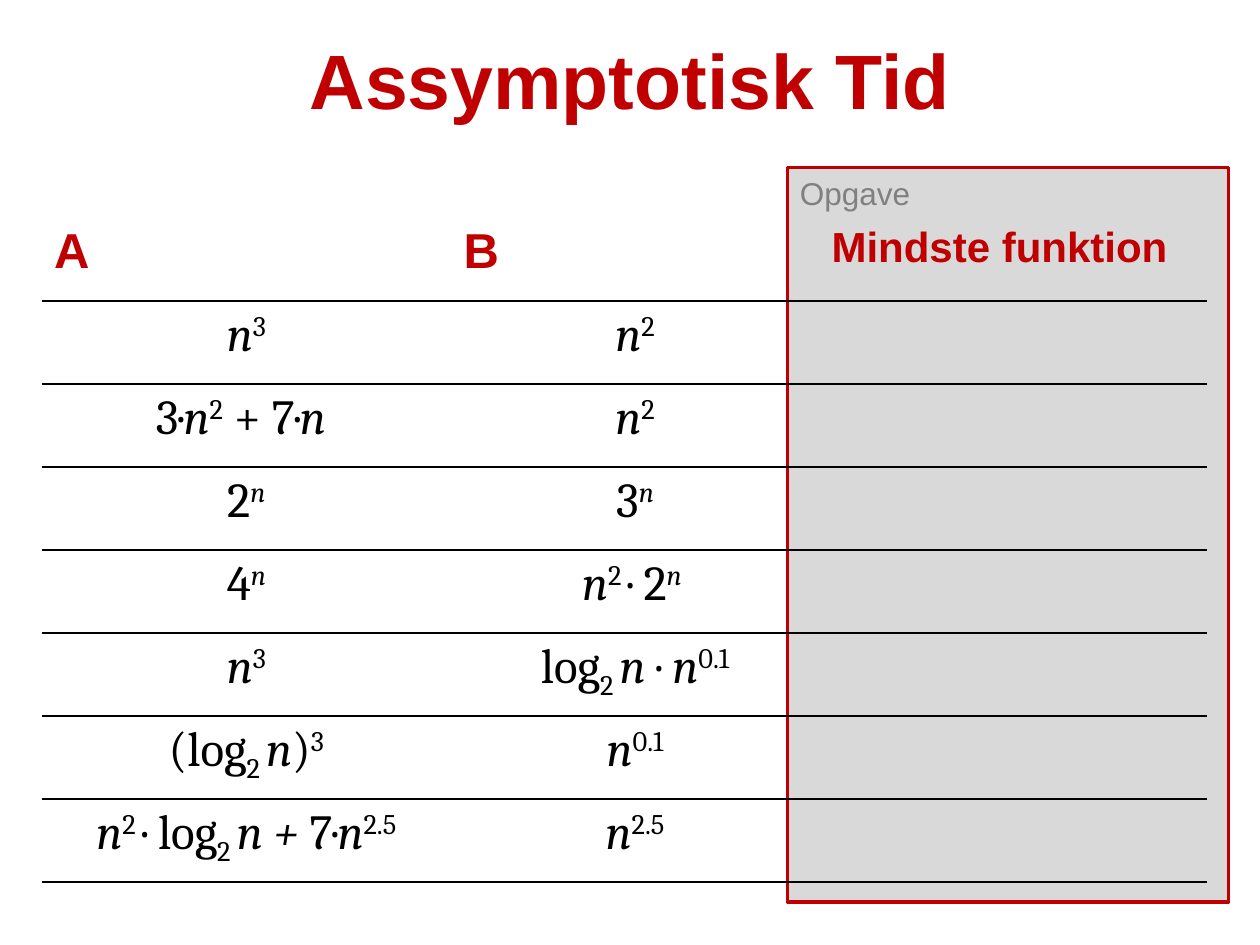
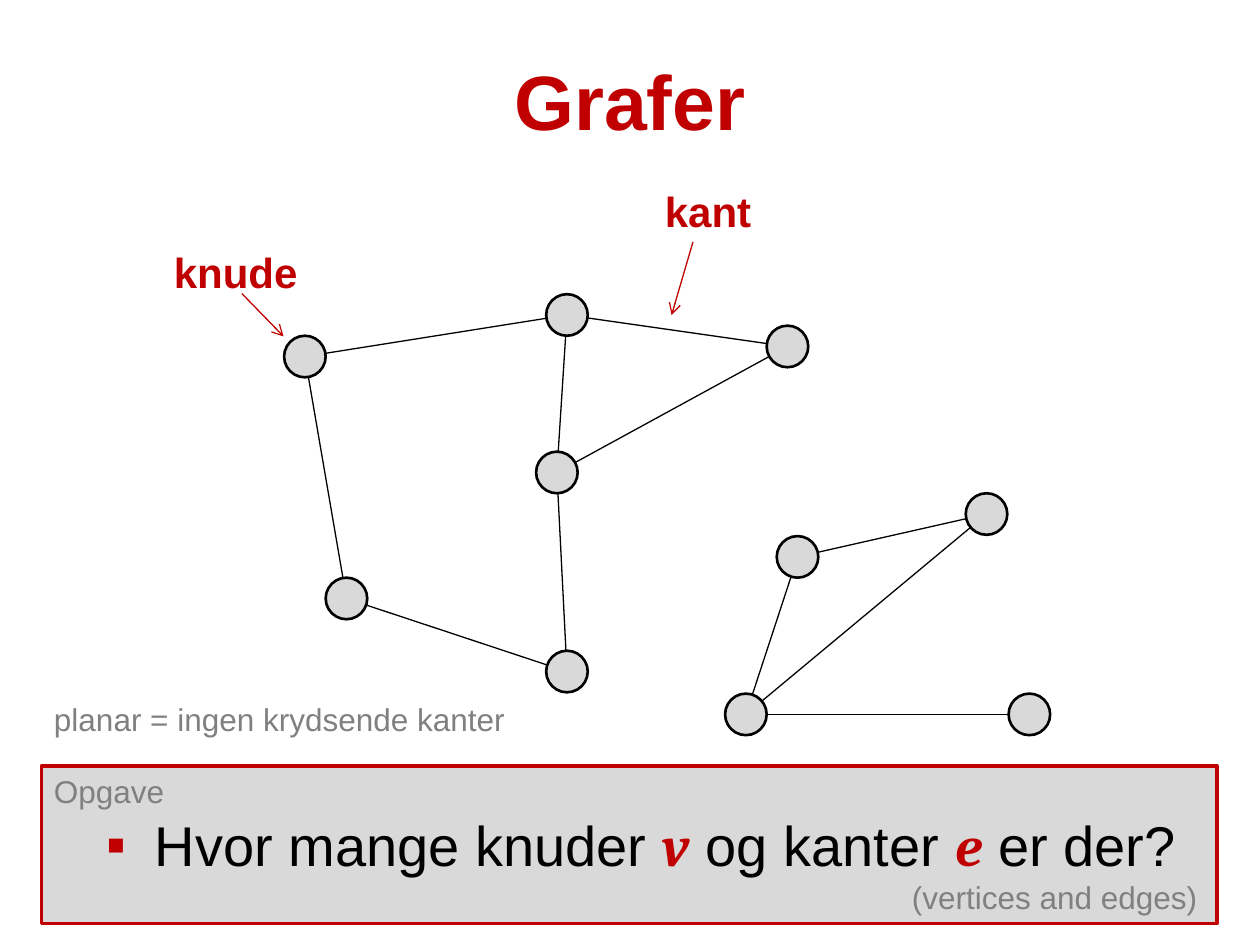
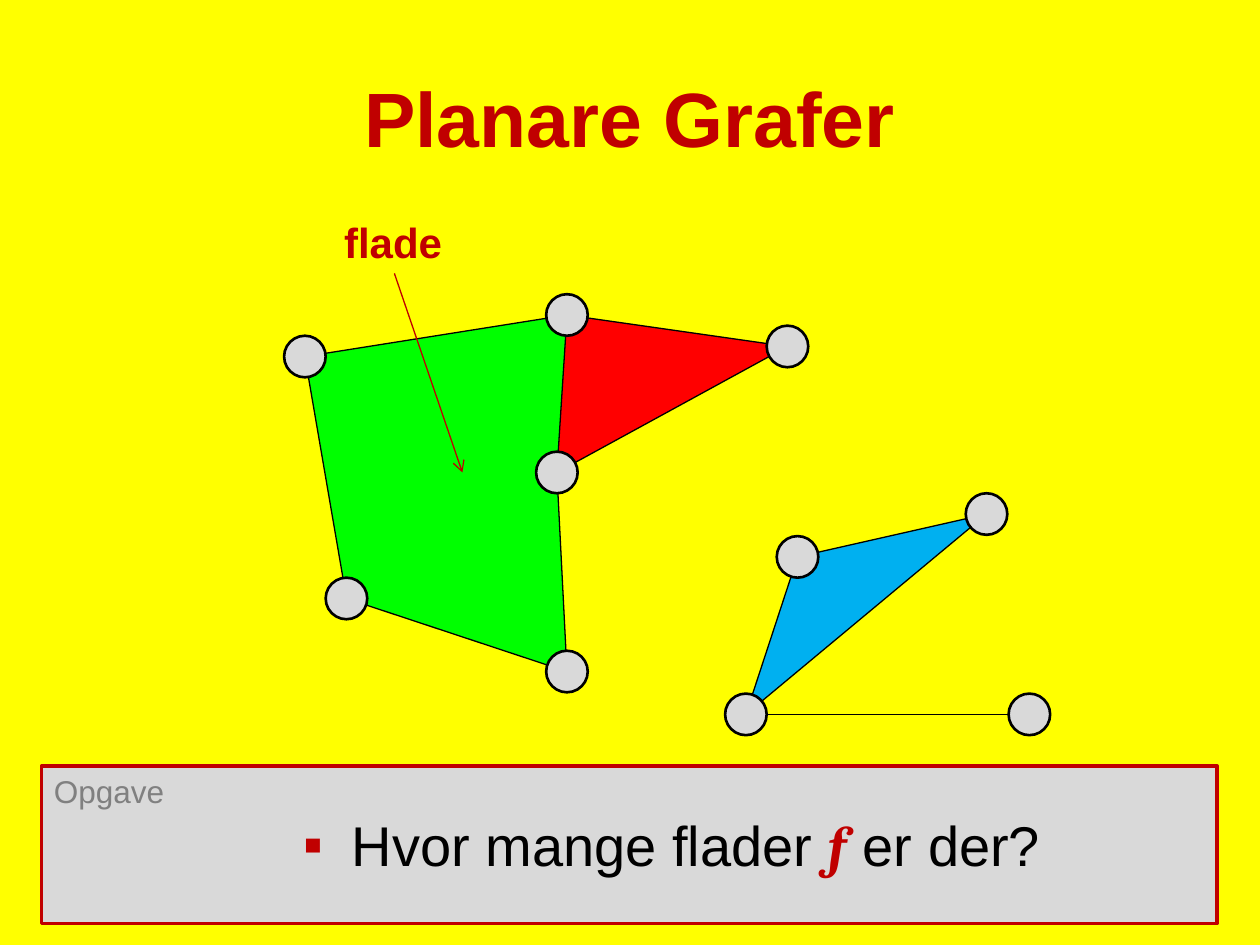
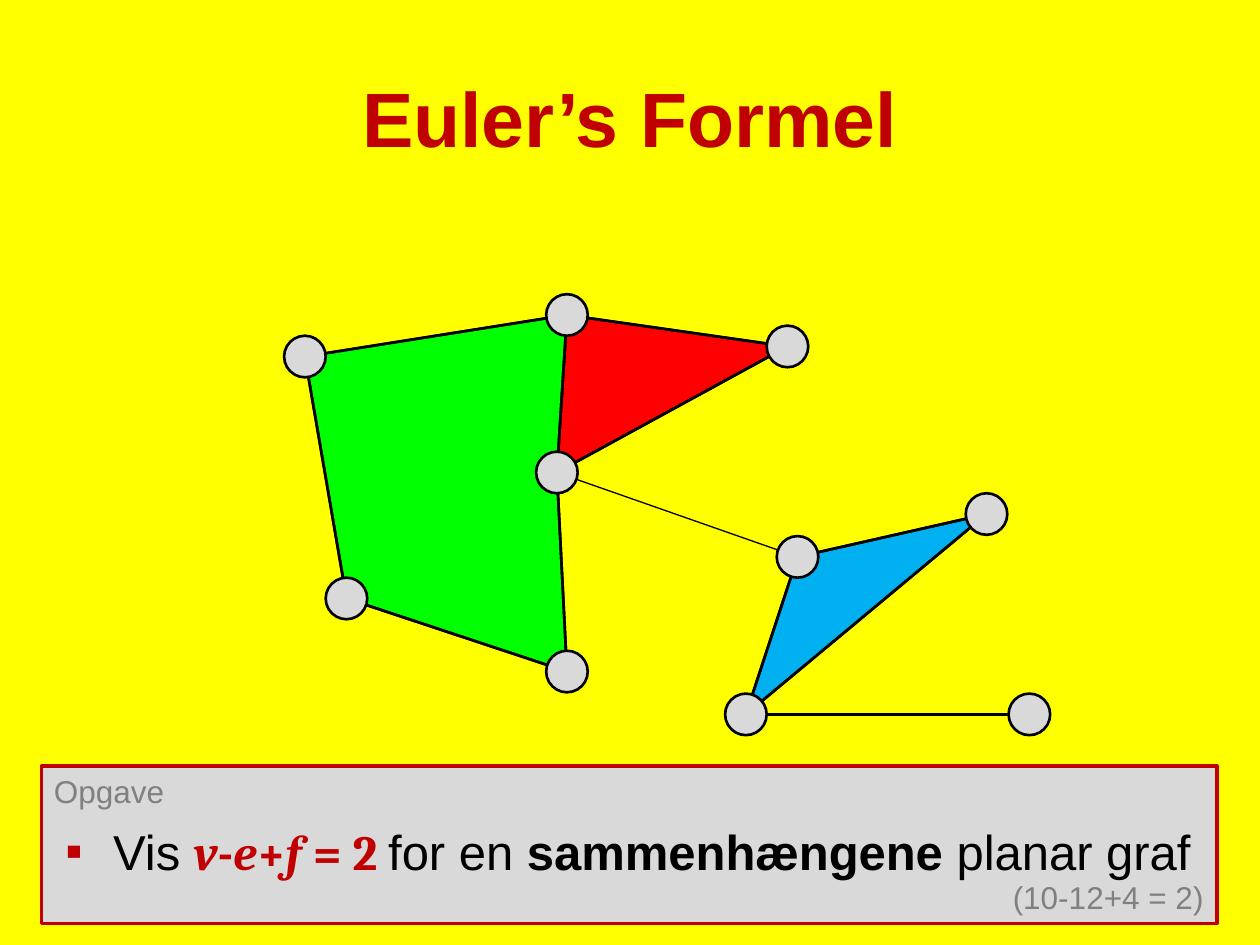
from lxml import etree
from pptx import Presentation
from pptx.dml.color import RGBColor
from pptx.enum.shapes import MSO_CONNECTOR as Connector, MSO_SHAPE as Shape
from pptx.enum.text import MSO_ANCHOR as Anchor, MSO_AUTO_SIZE as AutoSize, PP_ALIGN as Align
from pptx.oxml import parse_xml
from pptx.oxml.ns import nsdecls, qn
from pptx.util import Inches, Pt

WHITE = RGBColor(0xFF, 0xFF, 0xFF)
YELLOW = RGBColor(0xFF, 0xFF, 0x00)
BLACK = RGBColor(0x00, 0x00, 0x00)
DARK_RED = RGBColor(0xC0, 0x00, 0x00)
PANEL = RGBColor(0xD9, 0xD9, 0xD9)
GREY = RGBColor(0x80, 0x80, 0x80)
GREEN = RGBColor(0x00, 0xFF, 0x00)
RED = RGBColor(0xFF, 0x00, 0x00)
BLUE = RGBColor(0x00, 0xB0, 0xF0)

SANS, MATH = "Arial", "Cambria"
NO_GRID_STYLE = "{2D5ABB26-0587-4C30-8999-92F81FD0307C}"

TASK_BOX = (0.33, 6.08, 9.33, 1.25)
GRAPH_ORIGIN = (2.25, 2.33)
NODE_SIZE = 0.33

# Node centres, measured from the corner of the graph
NODES = {
    "top": (2.25, 0.17), "left": (0.17, 0.5), "right": (4, 0.42),
    "middle": (2.17, 1.42), "low_left": (0.5, 2.42), "bottom": (2.25, 3),
    "wing": (4.08, 2.09), "tip": (5.58, 1.75),
    "corner": (3.67, 3.34), "leaf": (5.92, 3.34),
}
EDGES = [
    ("bottom", "middle"), ("left", "low_left"), ("left", "top"),
    ("bottom", "low_left"), ("middle", "top"), ("top", "right"),
    ("middle", "right"), ("wing", "tip"), ("wing", "corner"),
    ("leaf", "corner"), ("tip", "corner"),
]
FACES = [
    (BLUE, ("wing", "tip", "corner")),
    (RED, ("middle", "right", "top")),
    (GREEN, ("left", "top", "middle", "bottom", "low_left")),
]

# Each formula is a list of (text, style): i italic, ^ raised, _ lowered
N = ("n", "i")
TWO = ("2", "^")
LOG = [("log", ""), ("2 ", "_")]
FORMULAS = [
    ([N, ("3", "^")], [N, TWO]),
    ([("3·", ""), N, TWO, (" + 7·", ""), ("n ", "i")], [N, TWO]),
    ([("2", ""), ("n", "^i")], [("3", ""), ("n", "^i")]),
    ([("4", ""), ("n", "^i")],
     [N, ("2 ", "^"), ("· 2", ""), ("n ", "^i")]),
    ([N, ("3", "^")],
     [*LOG, ("n ", "i"), ("· ", ""), N, ("0.1", "^")]),
    ([("(log", ""), ("2 ", "_"), N, (")", ""), ("3", "^")],
     [N, ("0.1", "^")]),
    ([N, ("2 ", "^"), ("· log", ""), ("2 ", "_"), ("n + ", "i"),
      ("7·", ""), N, ("2.5", "^")],
     [N, ("2.5", "^")]),
]


def inches(values):
    return [Inches(value) for value in values]


def set_font(font, size, color, name=SANS, bold=False):
    font.size, font.name, font.bold = Pt(size), name, bold
    font.color.rgb = color


def add_slide(deck, title, top, background):
    slide = deck.slides.add_slide(deck.slide_layouts[5])
    slide.background.fill.solid()
    slide.background.fill.fore_color.rgb = background
    heading = slide.shapes.title
    heading.left, heading.top, heading.width, heading.height = inches((0.5, top, 9, 1.25))
    heading.text_frame.text = title
    heading.text_frame.vertical_anchor = Anchor.MIDDLE
    paragraph = heading.text_frame.paragraphs[0]
    paragraph.alignment = Align.CENTER
    set_font(paragraph.font, 44, DARK_RED, bold=True)
    return slide


def add_line(shapes, start, end, color=BLACK, weight=0.75, arrow=False):
    line = shapes.add_connector(Connector.STRAIGHT, *inches(start), *inches(end))
    line.line.color.rgb = color
    line.line.width = Pt(weight)
    properties = line._element.spPr
    if arrow:
        etree.SubElement(properties.find(qn("a:ln")), qn("a:tailEnd"), type="arrow")
    etree.SubElement(properties, qn("a:effectLst"))


def style_shape(shape, fill, outline, weight):
    """Fill and outline a shape; an outline of None means no line."""
    shape.shadow.inherit = False
    shape.fill.solid()
    shape.fill.fore_color.rgb = fill
    if outline is None:
        shape.line.fill.background()
    else:
        shape.line.color.rgb = outline
        shape.line.width = Pt(weight)


def add_task_box(slide, box):
    panel = slide.shapes.add_shape(Shape.RECTANGLE, *inches(box))
    style_shape(panel, PANEL, DARK_RED, 2)
    panel.text_frame.text = "Opgave"
    panel.text_frame.vertical_anchor = Anchor.TOP
    paragraph = panel.text_frame.paragraphs[0]
    paragraph.alignment = Align.LEFT
    set_font(paragraph.font, 18, GREY)


def add_caption(slide, text, box, size=18, color=GREY, bold=False, align=Align.CENTER):
    frame = slide.shapes.add_textbox(*inches(box)).text_frame
    frame.word_wrap = True
    frame.auto_size = AutoSize.SHAPE_TO_FIT_TEXT
    frame.text = text
    frame.paragraphs[0].alignment = align
    set_font(frame.paragraphs[0].font, size, color, bold=bold)


def add_term(slide, text, left, top, arrow_start, arrow_end):
    """Name a part of the graph and point at it."""
    add_caption(slide, text, (left, top, 2.08, 0.5), 24, DARK_RED, bold=True)
    add_line(slide.shapes, arrow_start, arrow_end, DARK_RED, arrow=True)


def add_question(slide, pieces, box, size=32, align=Align.LEFT):
    """Write a bulleted question; styles are m math, i italic, b bold."""
    frame = slide.shapes.add_textbox(*inches(box)).text_frame
    frame.word_wrap = True
    paragraph = frame.paragraphs[0]
    paragraph.alignment = align
    properties = paragraph._p.get_or_add_pPr()
    properties.set("marL", str(Inches(0.38)))
    properties.set("indent", str(-Inches(0.38)))
    for markup in (
        '<a:spcBef {}><a:spcPct val="20000"/></a:spcBef>',
        '<a:buClr {}><a:srgbClr val="' + str(DARK_RED) + '"/></a:buClr>',
        '<a:buFont {} typeface="Arial"/>',
        '<a:buChar {} char="▪"/>',
    ):
        properties.append(parse_xml(markup.format(nsdecls("a"))))
    for text, style in pieces:
        run = paragraph.add_run()
        run.text = text
        math = "m" in style
        set_font(run.font, size, DARK_RED if math else BLACK,
                 MATH if math else SANS, bold=math or "b" in style)
        run.font.italic = "i" in style


def add_graph(slide, origin, faces=False, weight=0.75, face_outline=None, bridge=False):
    places = {name: (origin[0] + x, origin[1] + y) for name, (x, y) in NODES.items()}
    if bridge:
        add_line(slide.shapes, places["wing"], places["middle"])
    for color, corners in FACES if faces else []:
        outline = [inches(places[corner]) for corner in corners]
        builder = slide.shapes.build_freeform(*outline[0])
        builder.add_line_segments(outline[1:], close=True)
        style_shape(builder.convert_to_shape(), color, face_outline, weight)
    edge_group = slide.shapes.add_group_shape().shapes
    for start, end in EDGES:
        add_line(edge_group, places[start], places[end], weight=weight)
    node_group = slide.shapes.add_group_shape().shapes
    for x, y in places.values():
        node = node_group.add_shape(Shape.OVAL, *inches(
            (x - NODE_SIZE / 2, y - NODE_SIZE / 2, NODE_SIZE, NODE_SIZE)))
        style_shape(node, PANEL, BLACK, 1.5)


def add_bottom_border(cell):
    cell._tc.get_or_add_tcPr().insert(0, parse_xml(
        f'<a:lnB {nsdecls("a")} w="{Pt(1)}"><a:solidFill>'
        f'<a:srgbClr val="{BLACK}"/></a:solidFill></a:lnB>'))


def write_formula(paragraph, pieces):
    set_font(paragraph.font, 28, BLACK, MATH)
    for text, style in pieces:
        run = paragraph.add_run()
        run.text = text
        run.font.italic = "i" in style
        if "^" in style:
            run.font._element.set("baseline", "30000")
        elif "_" in style:
            run.font._element.set("baseline", "-25000")


def add_function_table(slide, box):
    headers = [("A", 28), ("B", 28), ("Mindste funktion", 24)]
    row_count = len(FORMULAS) + 1
    table = slide.shapes.add_table(row_count, len(headers), *inches(box)).table
    table.first_row = table.horz_banding = False
    table._tbl.tblPr.find(qn("a:tableStyleId")).text = NO_GRID_STYLE
    for column, width in zip(table.columns, (3.25, 2.92, 3.08)):
        column.width = Inches(width)
    for row in table.rows:
        row.height = Inches(box[3] / row_count)
        for cell in row.cells:
            cell.fill.background()
            add_bottom_border(cell)
            cell.text_frame.paragraphs[0].alignment = Align.CENTER
    for column, (text, size) in enumerate(headers):
        cell = table.cell(0, column)
        cell.text = text
        set_font(cell.text_frame.paragraphs[0].font, size, DARK_RED, bold=True)
    for row, formulas in enumerate(FORMULAS, start=1):
        for column, pieces in enumerate(formulas):
            write_formula(table.cell(row, column).text_frame.paragraphs[0], pieces)


def build_asymptotic_time(deck):
    slide = add_slide(deck, "Assymptotisk Tid", 0, WHITE)
    add_task_box(slide, (6.25, 1.33, 3.5, 5.83))
    add_function_table(slide, (0.33, 1.73, 9.25, 5.27))


def build_graphs(deck):
    slide = add_slide(deck, "Grafer", 0.17, WHITE)
    add_graph(slide, GRAPH_ORIGIN)
    add_term(slide, "knude", 0.83, 1.91, (1.92, 2.33), (2.25, 2.67))
    add_term(slide, "kant", 4.58, 1.42, (5.5, 1.92), (5.33, 2.5))
    add_task_box(slide, TASK_BOX)
    add_question(slide, [("Hvor mange knuder ", ""), ("v", "mi"), (" og kanter ", ""),
                         ("e", "mi"), (" er der?", "")], (0.75, 6.38, 9.17, 0.7))
    add_caption(slide, "(vertices and edges)", (7.08, 6.92, 2.58, 0.4))
    add_caption(slide, "planar = ingen krydsende kanter", (0.33, 5.51, 3.92, 0.4),
                align=Align.LEFT)


def build_planar_graphs(deck):
    slide = add_slide(deck, "Planare Grafer", 0.3, YELLOW)
    add_graph(slide, GRAPH_ORIGIN, faces=True)
    add_term(slide, "flade", 2.08, 1.67, (3.13, 2.17), (3.67, 3.75))
    add_task_box(slide, TASK_BOX)
    add_question(slide, [("Hvor mange flader ", ""), ("f", "mi"), (" er der?", "")],
                 (0.75, 6.38, 9.17, 0.7), align=Align.CENTER)


def build_euler_formula(deck):
    slide = add_slide(deck, "Euler’s Formel", 0.3, YELLOW)
    add_task_box(slide, TASK_BOX)
    add_question(slide, [("Vis ", ""), ("v", "mi"), ("-", "m"), ("e", "mi"), ("+", "m"),
                         ("f ", "mi"), ("= 2 ", "m"), ("for en ", ""),
                         ("sammenhængene ", "b"), ("planar graf", "")],
                 (0.42, 6.47, 9.17, 0.7), size=28)
    add_graph(slide, GRAPH_ORIGIN, faces=True, weight=1.5, face_outline=BLACK, bridge=True)
    add_caption(slide, "(10-12+4 = 2)", (7.92, 6.92, 1.75, 0.4))


def main():
    deck = Presentation()
    deck.slide_width, deck.slide_height = Inches(10), Inches(7.5)
    build_asymptotic_time(deck)
    build_graphs(deck)
    build_planar_graphs(deck)
    build_euler_formula(deck)
    deck.save("out.pptx")


if __name__ == "__main__":
    main()
